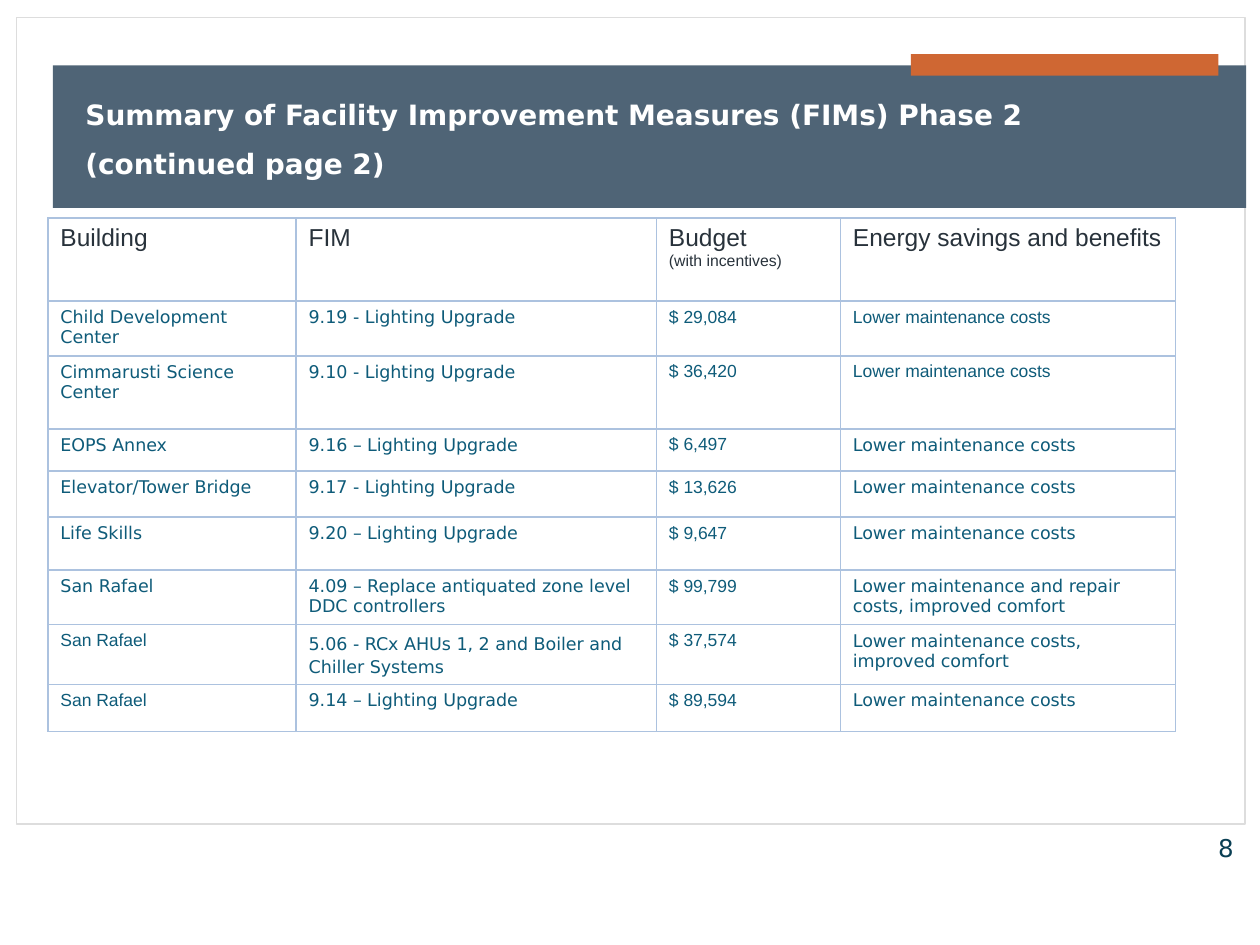
import pptx
import pptx.util
import pptx.dml.color
import pptx.enum.shapes
import pptx.enum.text
import lxml.etree

RGBColor = pptx.dml.color.RGBColor
WHITE = RGBColor(0xFF, 0xFF, 0xFF)
FRAME_GREY = RGBColor(0xDD, 0xDD, 0xDD)
SLATE = RGBColor(0x4F, 0x64, 0x76)
ORANGE = RGBColor(0xCF, 0x67, 0x33)
HEADING_INK = RGBColor(0x28, 0x32, 0x3B)
BODY_TEAL = RGBColor(0x0E, 0x5B, 0x79)
NUMBER_TEAL = RGBColor(0x0A, 0x3F, 0x54)
RULE_BLUE = RGBColor(0xAC, 0xC2, 0xDF)
SANS, ARIAL = "DejaVu Sans", "Arial"

deck = pptx.Presentation()
deck.slide_width = pptx.util.Inches(10)
deck.slide_height = pptx.util.Inches(7.5)
COL = deck.slide_width / 100
ROW = deck.slide_height / 75
slide = deck.slides.add_slide(deck.slide_layouts[6])


def grid(left, top, width, height):
    return [round(n * unit) for n, unit in zip((left, top, width, height), (COL, ROW, COL, ROW))]


def style(paragraph, size, font, color, bold=False):
    for run in paragraph.runs:
        run.font.size = pptx.util.Pt(size)
        run.font.name = font
        run.font.color.rgb = color
        run.font.bold = bold


for area, fill, edge in [
    ((1.3, 1.4, 97.5, 64), WHITE, FRAME_GREY),
    ((4.2, 5.2, 94.7, 11.3), SLATE, None),
    ((72.3, 4.3, 24.4, 1.7), ORANGE, None),
]:
    panel = slide.shapes.add_shape(pptx.enum.shapes.MSO_SHAPE.RECTANGLE, *grid(*area))
    panel.shadow.inherit = False
    panel.fill.solid()
    panel.fill.fore_color.rgb = fill
    if edge:
        panel.line.color.rgb = edge
        panel.line.width = pptx.util.Pt(1)
    else:
        panel.line.fill.background()

title = slide.shapes.add_textbox(*grid(5.8, 6.8, 89, 8)).text_frame
title.word_wrap = True
title.vertical_anchor = pptx.enum.text.MSO_ANCHOR.BOTTOM
title.text = "Summary of Facility Improvement Measures (FIMs) Phase 2 (continued page 2)"
title.paragraphs[0].line_spacing = pptx.util.Pt(28)
style(title.paragraphs[0], 16, SANS, WHITE, True)

LOWER = "Lower maintenance costs"
measures = [
    ("Building", "FIM", "Budget\n(with incentives)", "Energy savings and benefits"),
    ("Child Development Center", "9.19 - Lighting Upgrade", "$ 29,084", LOWER),
    ("Cimmarusti Science Center", "9.10 - Lighting Upgrade", "$ 36,420", LOWER),
    ("EOPS Annex", "9.16 – Lighting Upgrade", "$ 6,497", LOWER),
    ("Elevator/Tower Bridge", "9.17 - Lighting Upgrade", "$ 13,626", LOWER),
    ("Life Skills", "9.20 – Lighting Upgrade", "$ 9,647", LOWER),
    ("San Rafael", "4.09 – Replace antiquated zone level DDC controllers", "$ 99,799",
     "Lower maintenance and repair costs, improved comfort"),
    ("San Rafael", "5.06 - RCx AHUs 1, 2 and Boiler and Chiller Systems", "$ 37,574",
     "Lower maintenance costs, improved comfort"),
    ("San Rafael", "9.14 – Lighting Upgrade", "$ 89,594", LOWER),
]
column_spans = [19.7, 28.6, 14.6, 26.6]
row_spans = [6.6, 4.25, 5.8, 3.35, 3.65, 4.2, 4.3, 4.75, 3.75]
arial_cells = {(1, 3), (2, 3), (7, 0), (8, 0)}

summary = slide.shapes.add_table(
    len(measures), len(column_spans), *grid(3.8, 17.3, sum(column_spans), sum(row_spans))
).table
summary.first_row = False
summary.horz_banding = False
for column, span in zip(summary.columns, column_spans):
    column.width = round(span * COL)
for row, span in zip(summary.rows, row_spans):
    row.height = round(span * ROW)

A = "http://schemas.openxmlformats.org/drawingml/2006/main"
for r, measure in enumerate(measures):
    for c, wording in enumerate(measure):
        cell = summary.cell(r, c)
        cell.text_frame.text = wording
        for p, paragraph in enumerate(cell.text_frame.paragraphs):
            if r == 0:
                style(paragraph, 9 if p else 14, ARIAL, HEADING_INK)
            else:
                style(paragraph, 10, ARIAL if c == 2 or (r, c) in arial_cells else SANS, BODY_TEAL)
            if (r, c) == (7, 1):
                paragraph.line_spacing = pptx.util.Pt(13.5)
        properties = cell._tc.get_or_add_tcPr()
        for side in "LRTB":
            properties.append(lxml.etree.fromstring(
                f'<a:ln{side} xmlns:a="{A}" w="{pptx.util.Pt(1)}"><a:solidFill>'
                f'<a:srgbClr val="{RULE_BLUE}"/></a:solidFill></a:ln{side}>'))
        cell.fill.background()

page_number = slide.shapes.add_textbox(*grid(89.5, 65.6, 9.4, 3.4)).text_frame
page_number.word_wrap = True
page_number.text = "8"
page_number.paragraphs[0].alignment = pptx.enum.text.PP_ALIGN.RIGHT
style(page_number.paragraphs[0], 14, SANS, NUMBER_TEAL)

deck.save("out.pptx")
